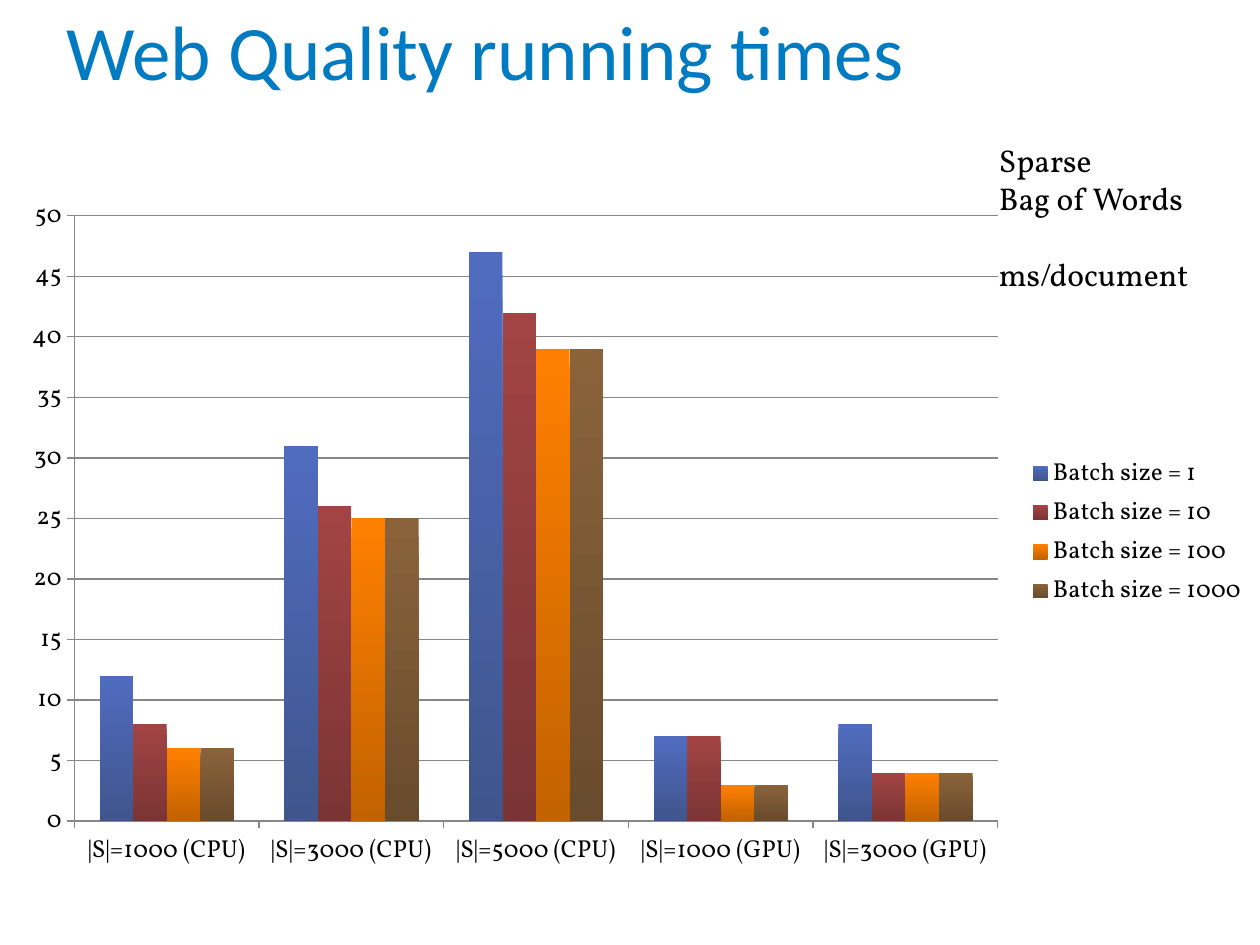
from dataclasses import dataclass
from typing import Any

from pptx import Presentation
from pptx import util as u
from pptx.chart.data import CategoryChartData
from pptx.dml.color import RGBColor
from pptx.enum import chart as chart_enum
from pptx.enum import text
from pptx.oxml import parse_xml
from pptx.oxml.ns import nsdecls, qn

PX_PER_INCH = 100
EMU_PER_PX = 914400 // PX_PER_INCH

TITLE_BLUE = RGBColor(0x00, 0x7B, 0xC2)
BLACK = RGBColor(0x00, 0x00, 0x00)
GRID_GRAY = RGBColor(0x87, 0x87, 0x87)
BLUE_TOP, BLUE_BOTTOM = RGBColor(0x50, 0x6C, 0xBF), RGBColor(0x3F, 0x55, 0x8C)
RED_TOP, RED_BOTTOM = RGBColor(0xA2, 0x44, 0x44), RGBColor(0x7B, 0x34, 0x34)
ORANGE_TOP, ORANGE_BOTTOM = RGBColor(0xFF, 0x80, 0x00), RGBColor(0xC2, 0x62, 0x00)
BROWN_TOP, BROWN_BOTTOM = RGBColor(0x8A, 0x63, 0x3B), RGBColor(0x69, 0x4B, 0x2D)


@dataclass(frozen=True)
class Box:
    left: int
    top: int
    width: int
    height: int

    def emu(self) -> list[u.Emu]:
        sides = (self.left, self.top, self.width, self.height)
        return [u.Emu(side * EMU_PER_PX) for side in sides]


@dataclass(frozen=True)
class Line:
    words: str
    spacing: dict[str, Any]


@dataclass(frozen=True)
class Batch:
    name: str
    times: tuple[int, ...]
    top_color: RGBColor
    bottom_color: RGBColor


CATEGORIES = (
    "|S|=1000 (CPU)",
    "|S|=3000 (CPU)",
    "|S|=5000 (CPU)",
    "|S|=1000 (GPU)",
    "|S|=3000 (GPU)",
)
BATCHES = (
    Batch("Batch size = 1", (12, 31, 47, 7, 8), BLUE_TOP, BLUE_BOTTOM),
    Batch("Batch size = 10", (8, 26, 42, 7, 4), RED_TOP, RED_BOTTOM),
    Batch("Batch size = 100", (6, 25, 39, 3, 4), ORANGE_TOP, ORANGE_BOTTOM),
    Batch("Batch size = 1000", (6, 25, 39, 3, 4), BROWN_TOP, BROWN_BOTTOM),
)
PLOT_AREA = {"x": 0.059, "y": 0.044, "w": 0.733, "h": 0.872}

TITLE_FONT = {"name": "Calibri", "size": u.Pt(44)}
NOTE_FONT = {"name": "Vollkorn", "size": u.Pt(18)}
CHART_FONT = {"name": "Vollkorn", "size": u.Pt(14)}


def apply_format(target: Any, values: dict[str, Any]) -> None:
    for name, value in values.items():
        setattr(target, name, value)


def apply_font(font: Any, values: dict[str, Any], color: RGBColor) -> None:
    apply_format(font, values)
    font.color.rgb = color


def add_text(slide: Any, box: Box, lines: tuple[Line, ...], frame_format: dict[str, Any],
             font_format: dict[str, Any], color: RGBColor) -> None:
    frame = slide.shapes.add_textbox(*box.emu()).text_frame
    apply_format(frame, frame_format)
    for index, line in enumerate(lines):
        paragraph = frame.add_paragraph() if index else frame.paragraphs[0]
        apply_format(paragraph, line.spacing)
        run = paragraph.add_run()
        run.text = line.words
        apply_font(run.font, font_format, color)


def place_plot_area(chart: Any) -> None:
    plot_area = chart.plots[0]._element.getparent()
    for layout in plot_area.findall(qn("c:layout")):
        plot_area.remove(layout)
    modes = '<c:layoutTarget val="inner"/><c:xMode val="edge"/><c:yMode val="edge"/>'
    sizes = "".join(f'<c:{name} val="{value}"/>' for name, value in PLOT_AREA.items())
    plot_area.insert(0, parse_xml(
        f'<c:layout {nsdecls("c")}><c:manualLayout>{modes}{sizes}</c:manualLayout></c:layout>'))


def format_axis(axis: Any) -> None:
    apply_format(axis, {
        "major_tick_mark": chart_enum.XL_TICK_MARK.OUTSIDE,
        "minor_tick_mark": chart_enum.XL_TICK_MARK.NONE,
    })
    apply_font(axis.tick_labels.font, CHART_FONT, BLACK)
    axis.format.line.color.rgb = GRID_GRAY


def fill_series(series: Any, batch: Batch) -> None:
    fill = series.format.fill
    fill.gradient()
    fill.gradient_angle = 270
    for stop, color in zip(fill.gradient_stops, (batch.top_color, batch.bottom_color)):
        stop.color.rgb = color
    series.invert_if_negative = False


def add_running_times(slide: Any, box: Box) -> None:
    data = CategoryChartData(number_format="0")
    data.categories = CATEGORIES
    for batch in BATCHES:
        data.add_series(batch.name, batch.times)
    chart = slide.shapes.add_chart(
        chart_enum.XL_CHART_TYPE.COLUMN_CLUSTERED, *box.emu(), data).chart
    apply_format(chart, {"has_title": False, "has_legend": True})
    apply_font(chart.font, CHART_FONT, BLACK)
    apply_format(chart.plots[0], {"gap_width": 150, "overlap": 0, "vary_by_categories": False})
    place_plot_area(chart)
    for axis in (chart.category_axis, chart.value_axis):
        format_axis(axis)
    apply_format(chart.value_axis, {
        "minimum_scale": 0, "maximum_scale": 50, "major_unit": 5, "has_major_gridlines": True})
    chart.value_axis.major_gridlines.format.line.color.rgb = GRID_GRAY
    apply_format(chart.legend, {
        "position": chart_enum.XL_LEGEND_POSITION.RIGHT, "include_in_layout": False})
    apply_font(chart.legend.font, CHART_FONT, BLACK)
    for series, batch in zip(chart.plots[0].series, BATCHES):
        fill_series(series, batch)


def main() -> None:
    presentation = Presentation()
    presentation.slide_width = u.Emu(1000 * EMU_PER_PX)
    presentation.slide_height = u.Emu(750 * EMU_PER_PX)
    slide = presentation.slides.add_slide(presentation.slide_layouts[6])
    add_text(
        slide, Box(43, 1, 913, 80),
        (Line("Web Quality running times", {"line_spacing": u.Pt(58)}),),
        {"word_wrap": True, "vertical_anchor": text.MSO_ANCHOR.BOTTOM},
        TITLE_FONT, TITLE_BLUE)
    add_text(
        slide, Box(783, 107, 173, 131),
        (Line("Sparse", {}), Line("Bag of Words", {}),
         Line("ms/document", {"space_before": u.Pt(22)})),
        {"word_wrap": False, "auto_size": text.MSO_AUTO_SIZE.SHAPE_TO_FIT_TEXT},
        NOTE_FONT, BLACK)
    add_running_times(slide, Box(0, 147, 1000, 551))
    presentation.save("out.pptx")


if __name__ == "__main__":
    main()
